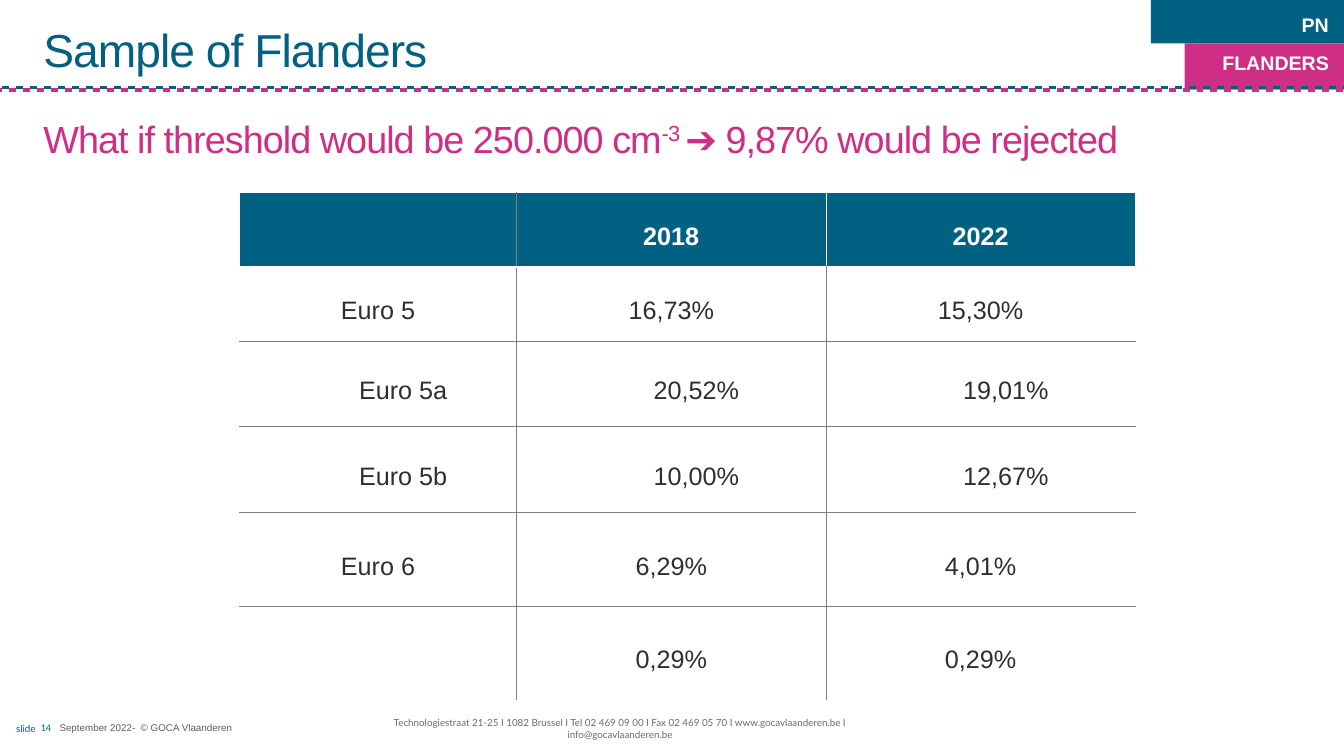
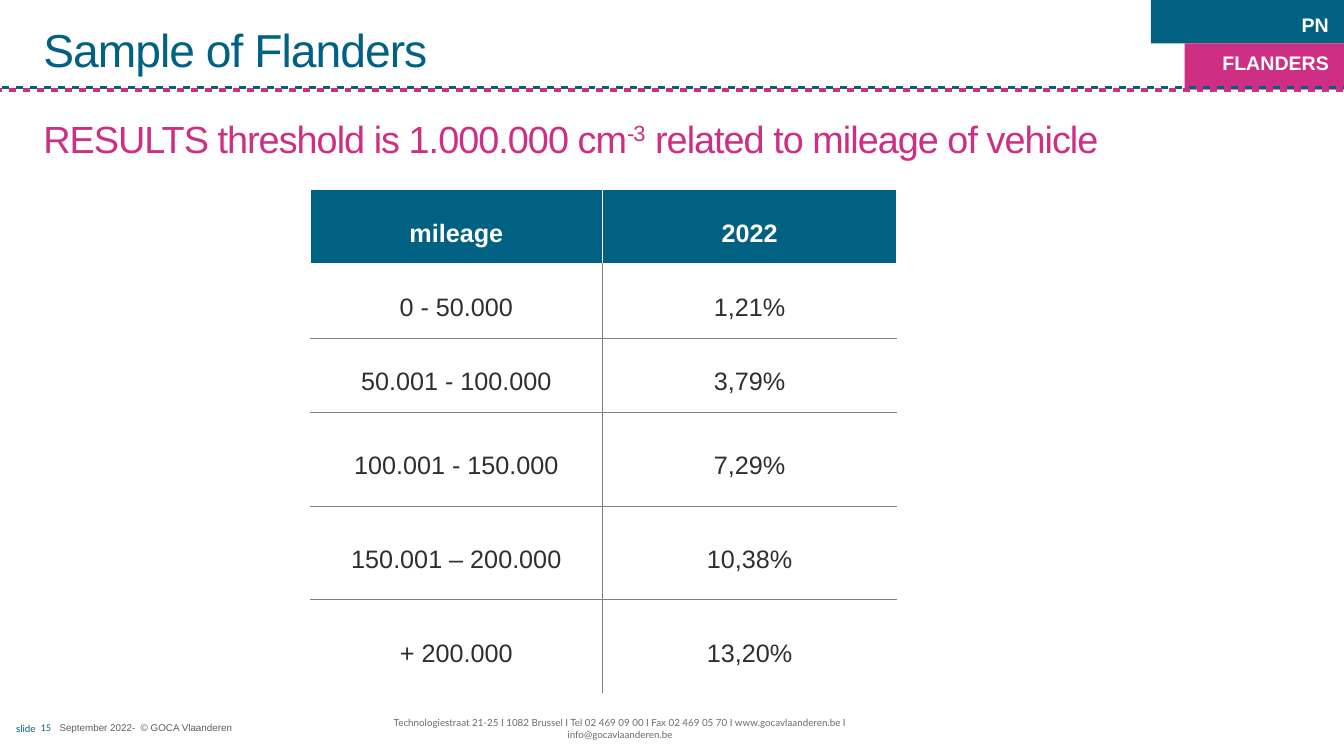
from lxml.etree import SubElement
from pptx import Presentation
from pptx.dml.color import RGBColor
from pptx.enum.shapes import MSO_CONNECTOR, MSO_SHAPE
from pptx.enum.text import MSO_ANCHOR as ANCHOR, MSO_AUTO_SIZE, PP_ALIGN as ALIGN
from pptx.oxml.ns import qn
from pptx.util import Inches, Pt

TEAL, PINK, WHITE = "006183", "CE2E83", "FFFFFF"
GREY, INK, FOOTER_GREY, DATE_GREY = "808080", "2F2F2F", "6E6A68", "5E5E5E"

TITLE = "Sample of Flanders"
TAGS = ["PN", "FLANDERS"]
ADDRESS = ("Technologiestraat 21-25 I 1082 Brussel I Tel 02 469 09 00 I Fax 02 469 05 70 "
           "I www.gocavlaanderen.be I info@gocavlaanderen.be")
DATE = "September 2022-  © GOCA Vlaanderen"
BANDS = [((22.84, -0.53, 3.86, 1.39), TEAL), ((23.51, 0.86, 3.2, 0.92), PINK)]
DASHES = [(-0.24, 27.81, 1.74, TEAL), (-0.37, 27.03, 1.79, PINK)]

SLIDES = [
    {
        "number": "14",
        "question": ["What if threshold would be 250.000 cm", "-3 ",
                     "➔ 9,87% would be rejected"],
        "corner": (4.75, 3.82),
        "widths": [5.5, 6.14, 6.14],
        "heights": [1.48, 1.47, 1.69, 1.71, 1.86, 1.86],
        "rows": [
            ["", "2018", "2022"],
            ["Euro 5", "16,73%", "15,30%"],
            ["Euro 5a", "20,52%", "19,01%"],
            ["Euro 5b", "10,00%", "12,67%"],
            ["Euro 6", "6,29%", "4,01%"],
            ["", "0,29%", "0,29%"],
        ],
        "subrows": {2, 3},
    },
    {
        "number": "15",
        "question": ["RESULTS threshold is 1.000.000 cm", "-3",
                     " related to mileage of vehicle"],
        "corner": (6.15, 3.76),
        "widths": [5.81, 5.83],
        "heights": [1.48, 1.47, 1.47, 1.86, 1.86, 1.86],
        "rows": [
            ["mileage", "2022"],
            ["0 - 50.000", "1,21%"],
            ["50.001 - 100.000", "3,79%"],
            ["100.001 - 150.000", "7,29%"],
            ["150.001 – 200.000", "10,38%"],
            ["+ 200.000", "13,20%"],
        ],
        "subrows": set(),
    },
]


def rgb(code):
    return RGBColor.from_string(code)


def inches(*lengths):
    return [Inches(length) for length in lengths]


def style(paragraph, size, color, face="Arial", bold=False, align=ALIGN.LEFT, spacing=1.0):
    paragraph.alignment = align
    paragraph.line_spacing = spacing
    font = paragraph.font
    font.name, font.size, font.bold = face, Pt(size), bold
    font.color.rgb = rgb(color)


def frame_text(shape, anchor=ANCHOR.MIDDLE, right=0.06):
    frame = shape.text_frame
    frame.word_wrap = True
    frame.auto_size = MSO_AUTO_SIZE.NONE
    frame.vertical_anchor = anchor
    frame.margin_left = frame.margin_top = frame.margin_bottom = Inches(0.06)
    frame.margin_right = Inches(right)
    return frame


def add_label(slide, box, text, size, color, face="Lato", anchor=ANCHOR.MIDDLE, **look):
    frame = frame_text(slide.shapes.add_textbox(*inches(*box)), anchor)
    frame.text = text
    style(frame.paragraphs[0], size, color, face, **look)
    return frame


def track(run, points):
    run._r.get_or_add_rPr().set("spc", str(round(points * 100)))


def fill_heading(holder, box, parts, size, color):
    holder.left, holder.top, holder.width, holder.height = inches(*box)
    paragraph = frame_text(holder, ANCHOR.BOTTOM).paragraphs[0]
    properties = paragraph._p.get_or_add_pPr()
    properties.set("marL", "0")
    properties.set("indent", "0")
    paragraph.space_before = Pt(0)
    SubElement(properties, qn("a:buNone"))
    style(paragraph, size, color, spacing=0.8)
    for position, part in enumerate(parts):
        run = paragraph.add_run()
        run.text = part
        track(run, -1.4)
        if position == 1:
            run._r.get_or_add_rPr().set("baseline", "30000")


def add_rectangle(slide, box, color):
    rectangle = slide.shapes.add_shape(MSO_SHAPE.RECTANGLE, *inches(*box))
    rectangle.shadow.inherit = False
    rectangle.fill.solid()
    rectangle.fill.fore_color.rgb = rgb(color)
    rectangle.line.fill.background()
    return rectangle


def add_dashes(slide, start, end, y, color):
    dashes = slide.shapes.add_connector(MSO_CONNECTOR.STRAIGHT, *inches(start, y, end, y))
    dashes.line.width = Pt(5)
    dashes.line.color.rgb = rgb(color)
    pattern = SubElement(dashes.line._get_or_add_ln(), qn("a:custDash"))
    SubElement(pattern, qn("a:ds"), d="200000", sp="200000")
    SubElement(dashes._element.spPr, qn("a:effectLst"))


def add_frame(slide, number):
    for box, color in BANDS:
        add_rectangle(slide, box, color)
    for dash in DASHES:
        add_dashes(slide, *dash)
    add_label(slide, (0.26, 14.28, 0.56, 0.35), "slide", 14, TEAL)
    page = add_label(slide, (0.75, 14.28, 0.56, 0.33), number, 13, TEAL,
                     anchor=ANCHOR.BOTTOM, spacing=0.8)
    track(page.paragraphs[0].runs[0], -0.3)
    tags = add_label(slide, (24.18, 0.12, 2.25, 1.39), "\n".join(TAGS), 28, WHITE, "Arial")
    for tag in tags.paragraphs:
        style(tag, 28, WHITE, bold=True, align=ALIGN.RIGHT, spacing=1.2)
    tags.paragraphs[1].space_before = Pt(14)
    address = add_label(slide, (7.79, 14.28, 11.09, 0.35), ADDRESS, 14, FOOTER_GREY,
                        align=ALIGN.CENTER)
    address.margin_left, address.margin_right = inches(0, 2.06)
    date = frame_text(add_rectangle(slide, (1.11, 14.27, 3.57, 0.35), WHITE))
    date.word_wrap = False
    date.text = DATE
    style(date.paragraphs[0], 14, DATE_GREY, align=ALIGN.CENTER)


def set_borders(cell, edges):
    properties = cell._tc.get_or_add_tcPr()
    for side, (color, width) in edges.items():
        line = SubElement(properties, qn(f"a:ln{side}"), w=str(Pt(width)))
        SubElement(SubElement(line, qn("a:solidFill")), qn("a:srgbClr"), val=color)


def cell_edges(rows, row, column):
    last_row, last_column = len(rows) - 1, len(rows[0]) - 1

    def upright(left):
        outer = left < 0 or left == last_column
        plain_header = row == 0 and rows[0][left] != ""
        return (WHITE if outer or plain_header else GREY, 1)

    def level(above):
        if above == 0:
            return (WHITE, 3)
        return (WHITE if above in (-1, last_row) else GREY, 1)

    return {"L": upright(column - 1), "R": upright(column),
            "T": level(row - 1), "B": level(row)}


def add_results(slide, corner, widths, heights, rows, subrows):
    results = slide.shapes.add_table(
        len(rows), len(widths), *inches(*corner, sum(widths), sum(heights))).table
    results.horz_banding = False
    for column, width in zip(results.columns, widths):
        column.width = Inches(width)
    for r, (values, height) in enumerate(zip(rows, heights)):
        results.rows[r].height = Inches(height)
        for c, value in enumerate(values):
            cell = results.cell(r, c)
            set_borders(cell, cell_edges(rows, r, c))
            if r == 0:
                cell.fill.solid()
                cell.fill.fore_color.rgb = rgb(TEAL)
            else:
                cell.fill.background()
            cell.vertical_anchor = ANCHOR.MIDDLE
            cell.text = value
            paragraph = cell.text_frame.paragraphs[0]
            if r in subrows:
                paragraph.level = 1
                paragraph._p.get_or_add_pPr().set("marL", str(Inches(1)))
            style(paragraph, 36, INK if r else WHITE, bold=r == 0,
                  align=ALIGN.CENTER, spacing=1.5)


def main():
    deck = Presentation()
    deck.slide_width, deck.slide_height = inches(26.67, 15)
    for content in SLIDES:
        slide = deck.slides.add_slide(deck.slide_layouts[1])
        add_frame(slide, content["number"])
        fill_heading(slide.shapes.title, (0.8, 0.17, 20.96, 1.4), [TITLE], 66, TEAL)
        fill_heading(slide.placeholders[1], (0.8, 1.84, 22.33, 1.4),
                     content["question"], 54, PINK)
        add_results(slide, content["corner"], content["widths"], content["heights"],
                    content["rows"], content["subrows"])
    deck.save("out.pptx")


if __name__ == "__main__":
    main()
